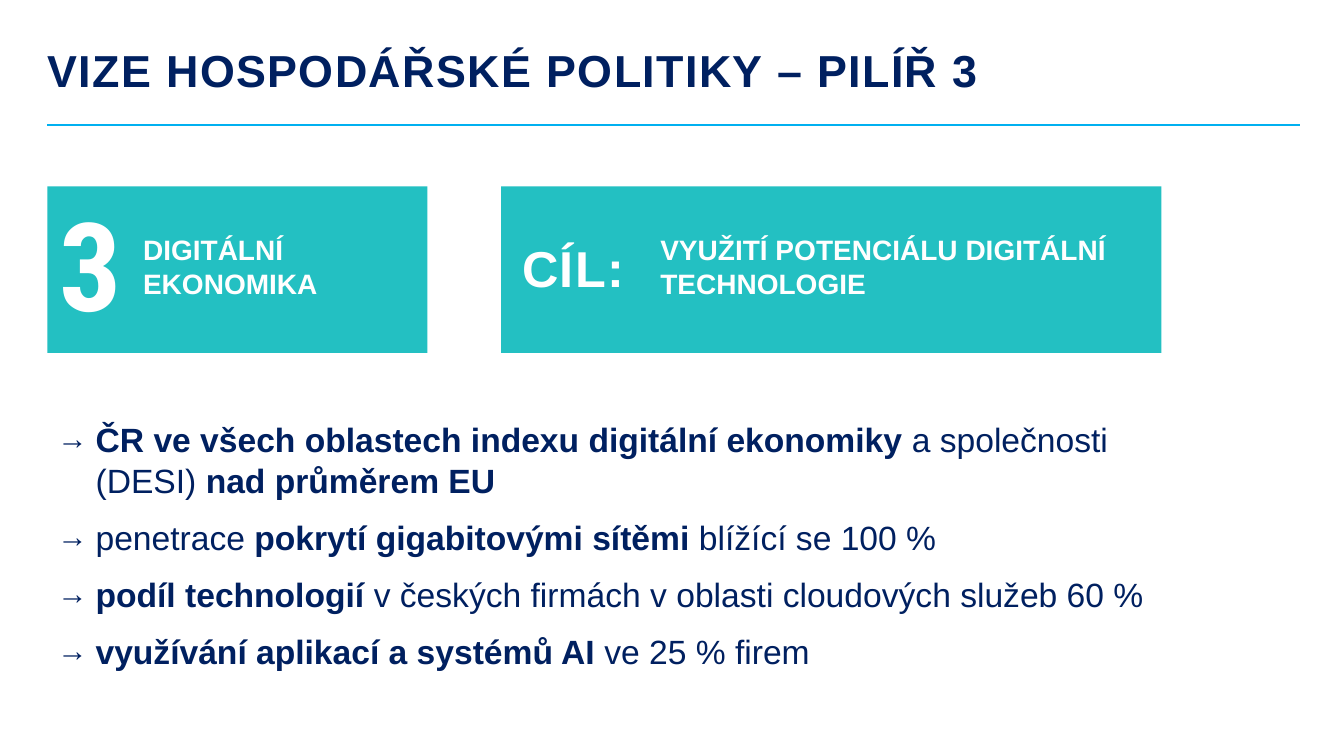
from lxml.etree import SubElement
from pptx import Presentation
from pptx.dml.color import RGBColor
from pptx.enum.shapes import MSO_CONNECTOR, MSO_SHAPE
from pptx.enum.text import MSO_ANCHOR, PP_ALIGN
from pptx.oxml.ns import qn
from pptx.util import Inches, Pt

COLORS = {"navy": "002060", "teal": "23C0C2", "sky": "00B0F0", "white": "FFFFFF"}
LEFT = 0.47
GOALS = [
    [("ČR ve všech oblastech indexu digitální ekonomiky ", True),
     ("a společnosti\n(DESI) ", False), ("nad průměrem EU", True)],
    [("penetrace ", False), ("pokrytí gigabitovými sítěmi ", True),
     ("blížící se 100 %", False)],
    [("podíl technologií ", True),
     ("v českých firmách v oblasti cloudových služeb 60 %", False)],
    [("využívání aplikací a systémů AI ", True), ("ve 25 % firem", False)],
]


def rgb(name):
    return RGBColor.from_string(COLORS[name])


def add_bullet(p, char, color, indent=0.38, percent=90):
    pPr = p._p.get_or_add_pPr()
    pPr.set("marL", str(Inches(indent)))
    pPr.set("indent", str(-Inches(indent)))
    clr = SubElement(pPr, qn("a:buClr"))
    SubElement(clr, qn("a:srgbClr"), val=COLORS[color])
    SubElement(pPr, qn("a:buSzPct"), val=str(percent * 1000))
    SubElement(pPr, qn("a:buFont"), typeface="Arial")
    SubElement(pPr, qn("a:buChar"), char=char)


def write(sp, paragraphs, size, color, font="Arial", anchor=MSO_ANCHOR.MIDDLE,
          inset=0.1, spacing=None, after=None, tracking=None, bullet=None):
    """Fill a shape with paragraphs, each a list of (text, bold) runs."""
    tf = sp.text_frame
    tf.word_wrap = True
    tf.vertical_anchor = anchor
    tf.margin_left = Inches(inset)
    for i, runs in enumerate(paragraphs):
        p = tf.add_paragraph() if i else tf.paragraphs[0]
        p.alignment = PP_ALIGN.LEFT
        if bullet:
            add_bullet(p, bullet, color)
        if spacing:
            p.line_spacing = spacing
        if after:
            p.space_after = Pt(after)
        for text, bold in runs:
            for n, part in enumerate(text.split("\n")):
                if n:
                    p.add_line_break()
                r = p.add_run()
                r.text = part
                r.font.name, r.font.size, r.font.bold = font, Pt(size), bold
                r.font.color.rgb = rgb(color)
                if tracking:
                    r._r.get_or_add_rPr().set("spc", str(tracking * 100))


def add_box(shapes, x, y, w, h):
    sp = shapes.add_shape(MSO_SHAPE.RECTANGLE, *map(Inches, (x, y, w, h)))
    sp.shadow.inherit = False
    sp.fill.solid()
    sp.fill.fore_color.rgb = rgb("teal")
    sp.line.fill.background()
    return sp


def add_title(slide, text, x, y, w, h, rule_y, rule_right):
    line = slide.shapes.add_connector(
        MSO_CONNECTOR.STRAIGHT, *map(Inches, (x, rule_y, rule_right, rule_y)))
    line.line.color.rgb = rgb("sky")
    line.line.width = Pt(1)
    SubElement(line._element.spPr, qn("a:effectLst"))
    sp = slide.shapes.add_textbox(*map(Inches, (x, y, w, h)))
    write(sp, [[(text, True)]], 32, "navy", inset=0, spacing=0.9, tracking=1)


def add_banner(slide, x, y, w, h, label, lines, label_x, label_w, text_w,
               size, font="Arial"):
    """Teal panel with a large label followed by smaller text lines."""
    shapes = slide.shapes.add_group_shape().shapes
    add_box(shapes, x, y, w, h)
    sp = add_box(shapes, x + label_x, y + 0.19, label_w, 1.3)
    write(sp, [[(label, True)]], size, "white", font, inset=0, spacing=0.9, tracking=1)
    sp = add_box(shapes, x + label_x + label_w, y + 0.41, text_w, 0.77)
    write(sp, [[(line, True)] for line in lines], 20, "white")


def add_goals(slide, goals, x, y, w, h):
    sp = slide.shapes.add_textbox(*map(Inches, (x, y, w, h)))
    write(sp, goals, 24, "navy", anchor=MSO_ANCHOR.TOP, after=12, bullet="→")


def main():
    prs = Presentation()
    prs.slide_width, prs.slide_height = Inches(13.33), Inches(7.5)
    slide = prs.slides.add_slide(prs.slide_layouts[6])
    add_title(slide, "VIZE HOSPODÁŘSKÉ POLITIKY – PILÍŘ 3",
              LEFT, 0.48, 10.09, 0.48, rule_y=1.24, rule_right=12.89)
    add_banner(slide, LEFT, 1.85, 3.77, 1.65, "3", ["DIGITÁLNÍ", "EKONOMIKA"],
               label_x=0.12, label_w=0.73, text_w=2.75, size=88, font="Roboto Condensed")
    add_goals(slide, GOALS, LEFT, 4.11, 11.71, 3.1)
    add_banner(slide, 4.97, 1.85, 6.55, 1.65, "CÍL:",
               ["VYUŽITÍ POTENCIÁLU DIGITÁLNÍ TECHNOLOGIE"],
               label_x=0.21, label_w=1.27, text_w=4.78, size=36)
    prs.save("out.pptx")


if __name__ == "__main__":
    main()
